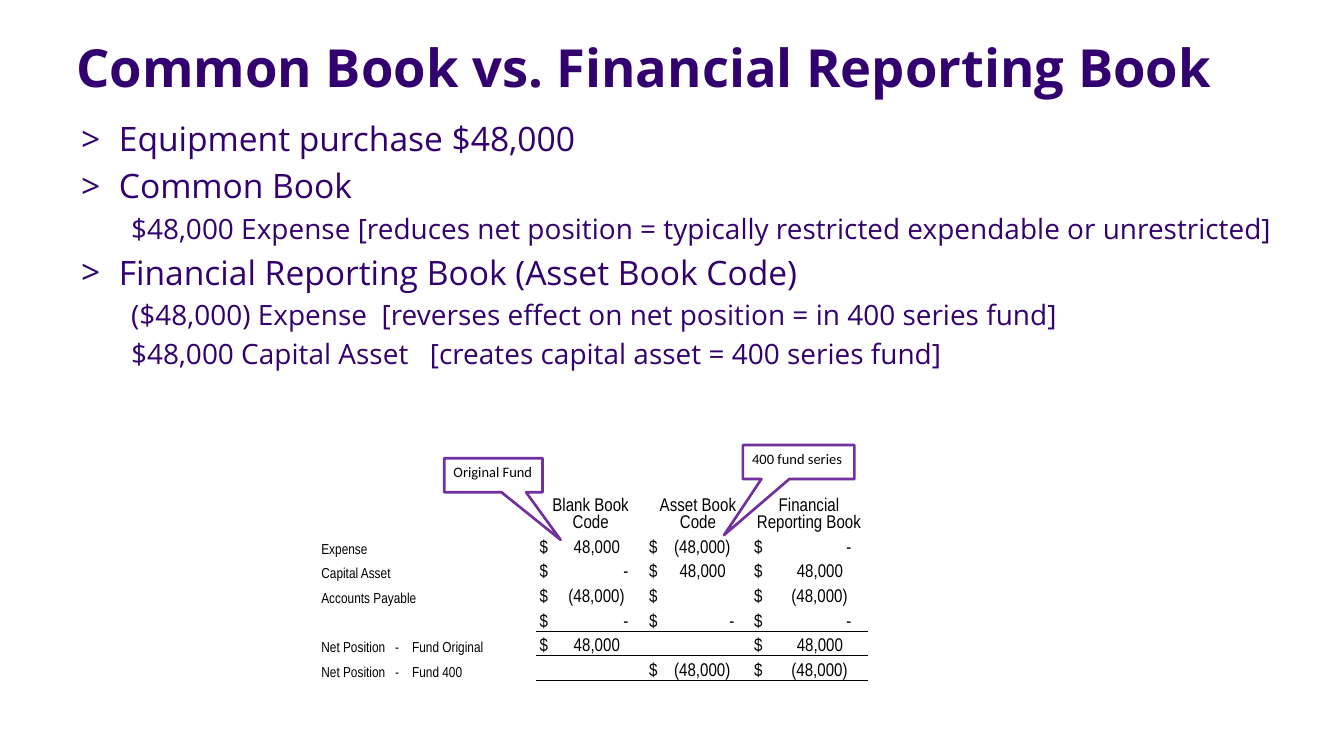
from lxml.etree import SubElement
from pptx import Presentation
from pptx.dml.color import RGBColor
from pptx.enum.shapes import MSO_SHAPE
from pptx.enum.text import MSO_ANCHOR, PP_ALIGN
from pptx.oxml.ns import qn
from pptx.util import Inches, Pt

# Content
TITLE = "Common Book vs. Financial Reporting Book"
# (level, text); a tab sets a remark apart from its amount
POINTS = [
    (0, "Equipment purchase $48,000"),
    (0, "Common Book"),
    (1, "$48,000 Expense [reduces net position = typically restricted expendable or unrestricted]"),
    (0, "Financial Reporting Book (Asset Book Code)"),
    (1, "($48,000) Expense\t[reverses effect on net position = in 400 series fund]"),
    (1, "$48,000 Capital Asset\t[creates capital asset = 400 series fund]"),
]
REMARK_TABS = {4: 2.65, 5: 3.16}  # from the text's indent, by point
HEADINGS = ["", "Blank Book Code", "Asset Book Code", "Financial Reporting Book"]
ROWS = [  # None is an empty cell, "" a dollar sign alone
    ("Expense", "48,000", "(48,000)", "-"),
    ("Capital Asset", "-", "48,000", "48,000"),
    ("Accounts Payable", "(48,000)", "", "(48,000)"),
    ("", "-", "-", "-"),
    ("Net Position\t-\tFund Original", "48,000", None, "48,000"),
    ("Net Position\t-\tFund 400", None, "(48,000)", "(48,000)"),
]
CALLOUTS = [  # text, place, pointer
    ("Original Fund", (4.7, 4.85, 1.04, 0.36), (0.685, 1.899)),
    ("400 fund series", (7.86, 4.71, 1.18, 0.36), (-0.669, 2.147)),
]

# Formats
PURPLE, VIOLET, BLACK = "33006F", "7030A0", "000000"
TITLE_FONT = {"name": "Open Sans", "size": Pt(40), "bold": True}
LEVELS = [
    {"name": "Open Sans", "size": Pt(25.6)},
    {"name": "Open Sans", "size": Pt(21.33)},
]
SPACE_BEFORE = [Pt(5.3), Pt(4.2)]
LABEL_FONT = {"name": "Arial Narrow", "size": Pt(11)}
AMOUNT_FONT = {"name": "Arial Narrow", "size": Pt(14)}
CALLOUT_FONT = {"name": "Calibri", "size": Pt(11)}
NO_MARGINS = {f"margin_{side}": 0 for side in ("left", "top", "right", "bottom")}
PLAIN_TABLE = "{2D5ABB26-0587-4C30-8999-92F81FD0307C}"  # no style, no grid

# Table grid
TABLE_LEFT, TABLE_TOP, ROW_HEIGHT = 3.4, 5.17, 0.26
COLUMN_WIDTHS = [2.27, 1.16, 1.11, 1.24]
AMOUNT_MARGIN = 0.04
AMOUNT_EDGES = [0.9, 0.86, 0.99]  # from the margin
LABEL_TABS = [(0.78, "l"), (0.96, "l")]
FIRST_RULED_ROW = 4


def color(hex_value):
    return RGBColor.from_string(hex_value)


def apply(target, formats):
    for name, value in formats.items():
        setattr(target, name, value)


def write(paragraph, text, formats, hex_value):
    paragraph.text = text
    font = paragraph.runs[0].font if paragraph.runs else paragraph.font
    apply(font, formats)
    font.color.rgb = color(hex_value)


def indent(paragraph, left, first=None):
    properties = paragraph._p.get_or_add_pPr()
    properties.set("marL", str(Inches(left)))
    if first is not None:
        properties.set("indent", str(Inches(first)))


def add_bullet(paragraph, character, typeface):
    properties = paragraph._p.get_or_add_pPr()
    SubElement(properties, qn("a:buFont"), typeface=typeface)
    SubElement(properties, qn("a:buChar"), char=character)


def add_tabs(paragraph, stops):
    tabs = SubElement(paragraph._p.get_or_add_pPr(), qn("a:tabLst"))
    for position, alignment in stops:
        SubElement(tabs, qn("a:tab"), pos=str(Inches(position)), algn=alignment)


def add_rule(cell, side):
    line = SubElement(cell._tc.get_or_add_tcPr(), qn(f"a:{side}"), w=str(Pt(0.5)))
    fill = SubElement(line, qn("a:solidFill"))
    SubElement(fill, qn("a:srgbClr"), val=BLACK)


def amount_edge(amount, edge):
    """Accounting layout: brackets and dashes hang past the digits."""
    if amount == "-":
        return edge + 0.04
    return edge if amount.endswith(")") else edge - 0.05


presentation = Presentation()
presentation.slide_width, presentation.slide_height = Inches(14.22), Inches(8)
slide = presentation.slides.add_slide(presentation.slide_layouts[5])

# Title
title = slide.shapes.title
apply(title, dict(left=Inches(0.71), top=Inches(0.4), width=Inches(13.2), height=Inches(0.52)))
apply(title.text_frame, dict(vertical_anchor=MSO_ANCHOR.TOP, word_wrap=True))
heading = title.text_frame.paragraphs[0]
apply(heading, dict(alignment=PP_ALIGN.LEFT, line_spacing=0.9))
write(heading, TITLE, TITLE_FONT, PURPLE)

# Points
body = slide.shapes.add_textbox(Inches(0.76), Inches(1.2), Inches(13), Inches(6.24)).text_frame
body.word_wrap = True
for number, (level, text) in enumerate(POINTS):
    paragraph = body.add_paragraph() if number else body.paragraphs[0]
    paragraph.level = level
    if number:
        paragraph.space_before = SPACE_BEFORE[level]
    if level:
        indent(paragraph, 0.53)
    else:
        indent(paragraph, 0.4, -0.4)
        add_bullet(paragraph, ">", LEVELS[0]["name"])
    if number in REMARK_TABS:
        add_tabs(paragraph, [(REMARK_TABS[number], "l")])
    write(paragraph, text, LEVELS[level], PURPLE)

# Callouts
for text, place, pointer in CALLOUTS:
    callout = slide.shapes.add_shape(MSO_SHAPE.RECTANGULAR_CALLOUT, *map(Inches, place))
    callout.shadow.inherit = False
    callout.fill.background()
    callout.line.color.rgb = color(VIOLET)
    callout.line.width = Pt(2)
    for number, value in enumerate(pointer):
        callout.adjustments[number] = value
    apply(callout.text_frame, dict(vertical_anchor=MSO_ANCHOR.TOP, word_wrap=False))
    paragraph = callout.text_frame.paragraphs[0]
    paragraph.alignment = PP_ALIGN.LEFT
    write(paragraph, text, CALLOUT_FONT, BLACK)

# Table
row_count = len(ROWS) + 1
table = slide.shapes.add_table(
    row_count, len(HEADINGS), Inches(TABLE_LEFT), Inches(TABLE_TOP),
    Inches(sum(COLUMN_WIDTHS)), Inches(ROW_HEIGHT * row_count)).table
apply(table, dict(first_row=False, horz_banding=False))
table._tbl.tblPr.find(qn("a:tableStyleId")).text = PLAIN_TABLE
for column, width in zip(table.columns, COLUMN_WIDTHS):
    column.width = Inches(width)
for row_number, row in enumerate([HEADINGS, *ROWS]):
    table.rows[row_number].height = Inches(ROW_HEIGHT)
    for column_number, text in enumerate(row):
        cell = table.cell(row_number, column_number)
        apply(cell, dict(NO_MARGINS, vertical_anchor=MSO_ANCHOR.BOTTOM))
        if column_number and row_number > FIRST_RULED_ROW:
            add_rule(cell, "lnT")
        if column_number and row_number >= FIRST_RULED_ROW:
            add_rule(cell, "lnB")
        cell.fill.background()
        paragraph = cell.text_frame.paragraphs[0]
        formats = AMOUNT_FONT if column_number else LABEL_FONT
        if row_number == 0:
            paragraph.alignment = PP_ALIGN.CENTER
        elif column_number == 0:
            if "\t" in text:
                add_tabs(paragraph, LABEL_TABS)
        elif text is not None:
            cell.margin_left = Inches(AMOUNT_MARGIN)
            if text:
                add_tabs(paragraph, [(amount_edge(text, AMOUNT_EDGES[column_number - 1]), "r")])
            text = f"$\t{text}" if text else "$"
        write(paragraph, text or "", formats, BLACK)

presentation.save("out.pptx")
